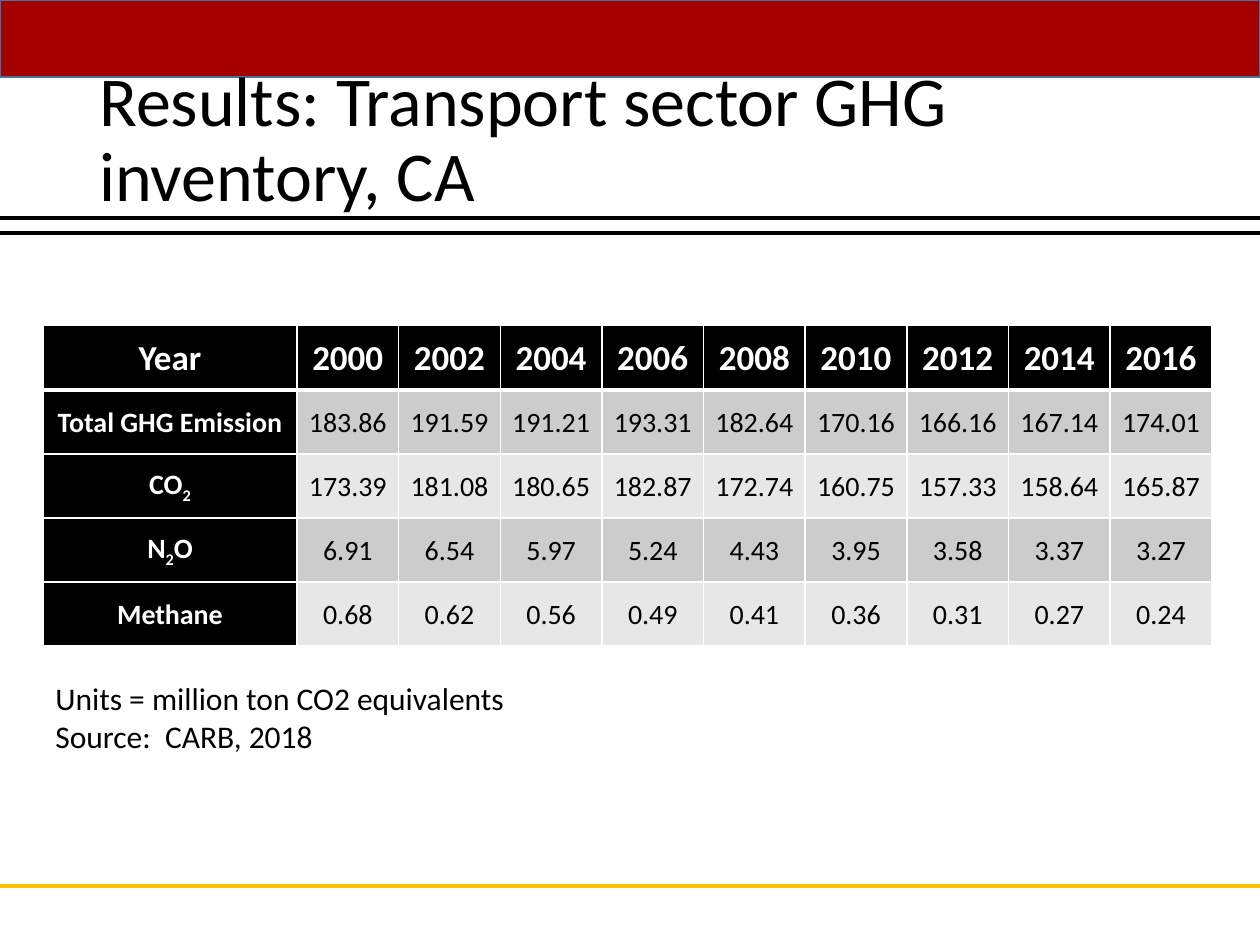
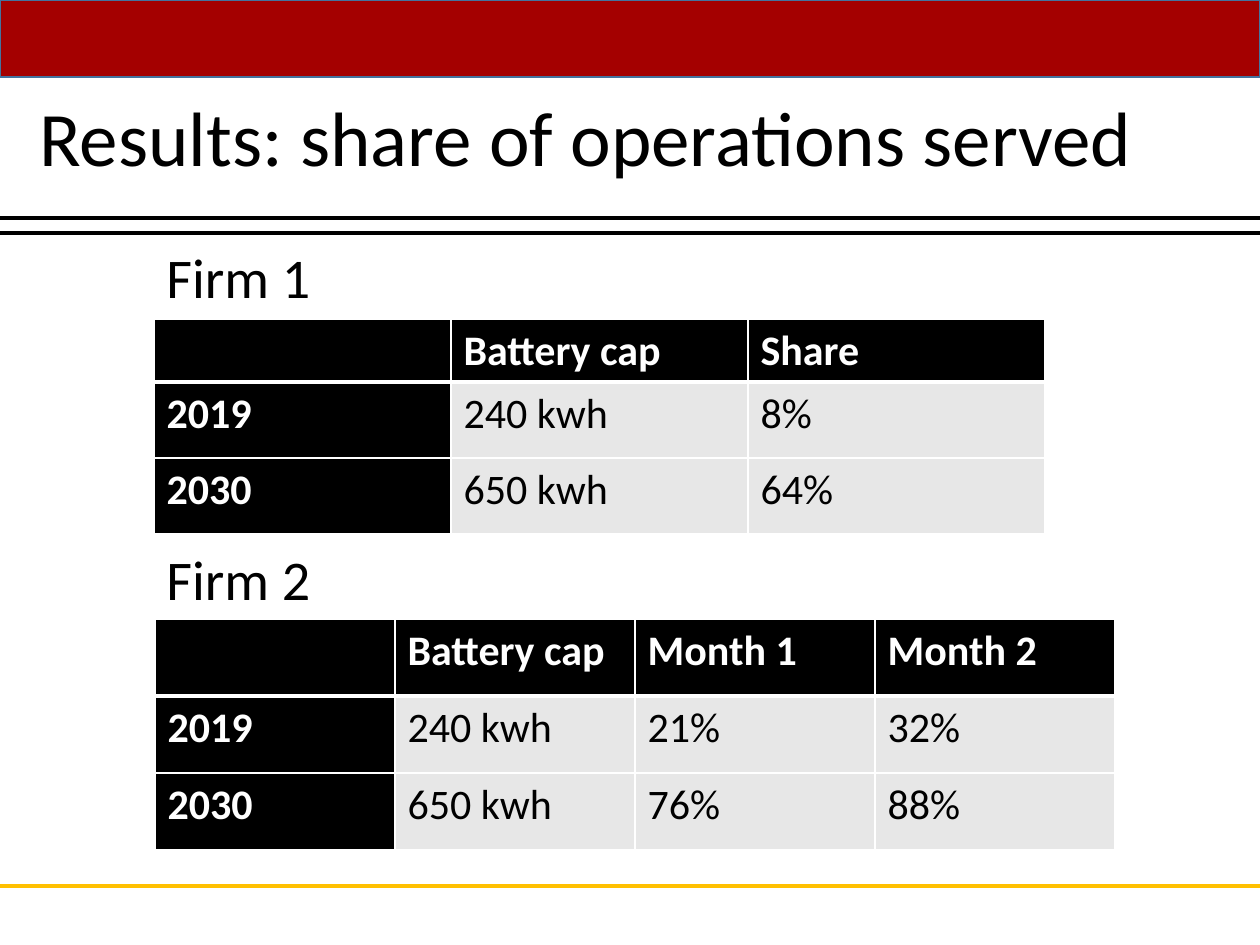
from dataclasses import dataclass

from lxml import etree
from pptx import Presentation
from pptx.dml.color import RGBColor
from pptx.enum import shapes, text
from pptx.oxml import ns
from pptx.util import Emu, Pt

EMISSIONS = [
    ["Year", "2000", "2002", "2004", "2006", "2008", "2010", "2012", "2014", "2016"],
    ["Total GHG Emission", "183.86", "191.59", "191.21", "193.31", "182.64",
     "170.16", "166.16", "167.14", "174.01"],
    [("CO", "2"), "173.39", "181.08", "180.65", "182.87", "172.74",
     "160.75", "157.33", "158.64", "165.87"],
    [("N", "2", "O"), "6.91", "6.54", "5.97", "5.24", "4.43", "3.95", "3.58", "3.37", "3.27"],
    ["Methane", "0.68", "0.62", "0.56", "0.49", "0.41", "0.36", "0.31", "0.27", "0.24"],
]
EMISSION_NOTES = "Units = million ton CO2 equivalents\nSource:  CARB, 2018"

FIRMS = [
    {
        "name": "Firm 1", "label_top": 236, "table_box": (154, 319, 891), "heights": [63, 76, 76],
        "rows": [
            ["", "Battery cap", "Share"],
            ["2019", "240 kwh", "8%"],
            ["2030", "650 kwh", "64%"],
        ],
    },
    {
        "name": "Firm 2", "label_top": 538, "table_box": (155, 619, 960), "heights": [77, 77, 77],
        "rows": [
            ["", "Battery cap", "Month 1", "Month 2"],
            ["2019", "240 kwh", "21%", "32%"],
            ["2030", "650 kwh", "76%", "88%"],
        ],
    },
]


@dataclass(frozen=True)
class Theme:
    font: str = "Calibri"
    black: str = "000000"
    white: str = "FFFFFF"
    band: str = "A40000"
    band_edge: str = "43739E"
    footer: str = "FFC000"
    dark_row: str = "CCCCCC"
    light_row: str = "E7E7E7"
    long_title: int = 40
    title: int = 44
    firm_label: int = 32
    firm_table: int = 24
    year_row: int = 20
    note: int = 18
    emission: int = 16
    rule_width: float = 2.25


THEME = Theme()
SLIDE_WIDTH, SLIDE_HEIGHT = 1260, 945
BAND_HEIGHT = 77
TITLE_RULES = (218, 233)
FOOTER_RULE = 886


def px(value):
    return Emu(round(value * 914400 / 126))


def rgb(color):
    return RGBColor.from_string(color)


def style_run(run, size, color, bold=False):
    run.font.name = THEME.font
    run.font.size = Pt(size)
    run.font.bold = bold
    run.font.color.rgb = rgb(color)


def add_rule(slide, top, color):
    rule = slide.shapes.add_connector(
        shapes.MSO_CONNECTOR.STRAIGHT, 0, px(top), px(SLIDE_WIDTH), px(top))
    rule.line.color.rgb = rgb(color)
    rule.line.width = Pt(THEME.rule_width)
    etree.SubElement(rule._element.spPr, ns.qn("a:effectLst"))


def add_text(slide, box, content, size):
    shape = slide.shapes.add_textbox(*map(px, box))
    frame = shape.text_frame
    frame.word_wrap = True
    frame.text = content
    for paragraph in frame.paragraphs:
        for run in paragraph.runs:
            style_run(run, size, THEME.black)
    return frame


def add_titled_slide(presentation, title, left, width, size):
    slide = presentation.slides.add_slide(presentation.slide_layouts[6])
    add_rule(slide, FOOTER_RULE, THEME.footer)
    band = slide.shapes.add_shape(
        shapes.MSO_SHAPE.RECTANGLE, 0, 0, px(SLIDE_WIDTH), px(BAND_HEIGHT))
    band.shadow.inherit = False
    band.fill.solid()
    band.fill.fore_color.rgb = rgb(THEME.band)
    band.line.color.rgb = rgb(THEME.band_edge)
    band.line.width = Pt(1)
    for top in TITLE_RULES:
        add_rule(slide, top, THEME.black)
    frame = add_text(slide, (left, 50, width, 183), title, size)
    frame.vertical_anchor = text.MSO_ANCHOR.MIDDLE
    frame.paragraphs[0].line_spacing = 0.9
    return slide


def add_borders(cell, widths):
    properties = cell._tc.get_or_add_tcPr()
    for side, width in widths.items():
        line = etree.SubElement(properties, ns.qn(f"a:ln{side}"), w=str(Pt(width)))
        fill = etree.SubElement(line, ns.qn("a:solidFill"))
        etree.SubElement(fill, ns.qn("a:srgbClr"), val=THEME.white)


def fill_cell(cell, content, background, size, color, bold):
    cell.fill.solid()
    cell.fill.fore_color.rgb = rgb(background)
    paragraph = cell.text_frame.paragraphs[0]
    parts = (content,) if isinstance(content, str) else content
    for index, part in enumerate(parts):
        run = paragraph.add_run()
        run.text = part
        style_run(run, size, color, bold)
        if index % 2:
            run._r.get_or_add_rPr().set("baseline", "-25000")


def add_grid(slide, origin, widths, heights, rows, sizes, stripes):
    frame = slide.shapes.add_table(
        len(rows), len(widths), *map(px, (*origin, sum(widths), sum(heights))))
    table = frame.table
    for column, width in zip(table.columns, widths):
        column.width = px(width)
    for row, height in zip(table.rows, heights):
        row.height = px(height)
    for i, values in enumerate(rows):
        for j, value in enumerate(values):
            heading = i == 0 or j == 0
            cell = table.cell(i, j)
            add_borders(cell, {"L": 1, "R": 1, "T": 3 if i == 1 else 1, "B": 3 if i == 0 else 1})
            fill_cell(cell, value,
                      THEME.black if heading else stripes[(i - 1) % len(stripes)],
                      sizes[0] if i == 0 else sizes[1],
                      THEME.white if heading else THEME.black, heading)
    return table


def build_inventory(presentation):
    slide = add_titled_slide(
        presentation, "Results: Transport sector GHG inventory, CA", 87, 1086, THEME.long_title)
    years = len(EMISSIONS[0]) - 1
    table = add_grid(
        slide, (43, 325), [254] + [915 / years] * years, [65] + [64] * 4, EMISSIONS,
        (THEME.year_row, THEME.emission), (THEME.dark_row, THEME.light_row))
    for cell in table.iter_cells():
        cell.vertical_anchor = text.MSO_ANCHOR.MIDDLE
        cell.margin_left = cell.margin_right = px(9)
        cell.margin_top = cell.margin_bottom = 0
        paragraph = cell.text_frame.paragraphs[0]
        paragraph.alignment = text.PP_ALIGN.CENTER
        paragraph.line_spacing = 1.07
    add_text(slide, (43, 673, 554, 89), EMISSION_NOTES, THEME.note)


def build_shares(presentation):
    slide = add_titled_slide(
        presentation, "Results: share of operations served", 27, 1148, THEME.title)
    for firm in FIRMS:
        left, top, width = firm["table_box"]
        columns = len(firm["rows"][0])
        add_grid(slide, (left, top), [width / columns] * columns, firm["heights"], firm["rows"],
                 (THEME.firm_table, THEME.firm_table), (THEME.light_row,))
        add_text(slide, (154, firm["label_top"], 427, 81), firm["name"], THEME.firm_label)


def main():
    presentation = Presentation()
    presentation.slide_width = px(SLIDE_WIDTH)
    presentation.slide_height = px(SLIDE_HEIGHT)
    build_inventory(presentation)
    build_shares(presentation)
    presentation.save("out.pptx")


if __name__ == "__main__":
    main()
